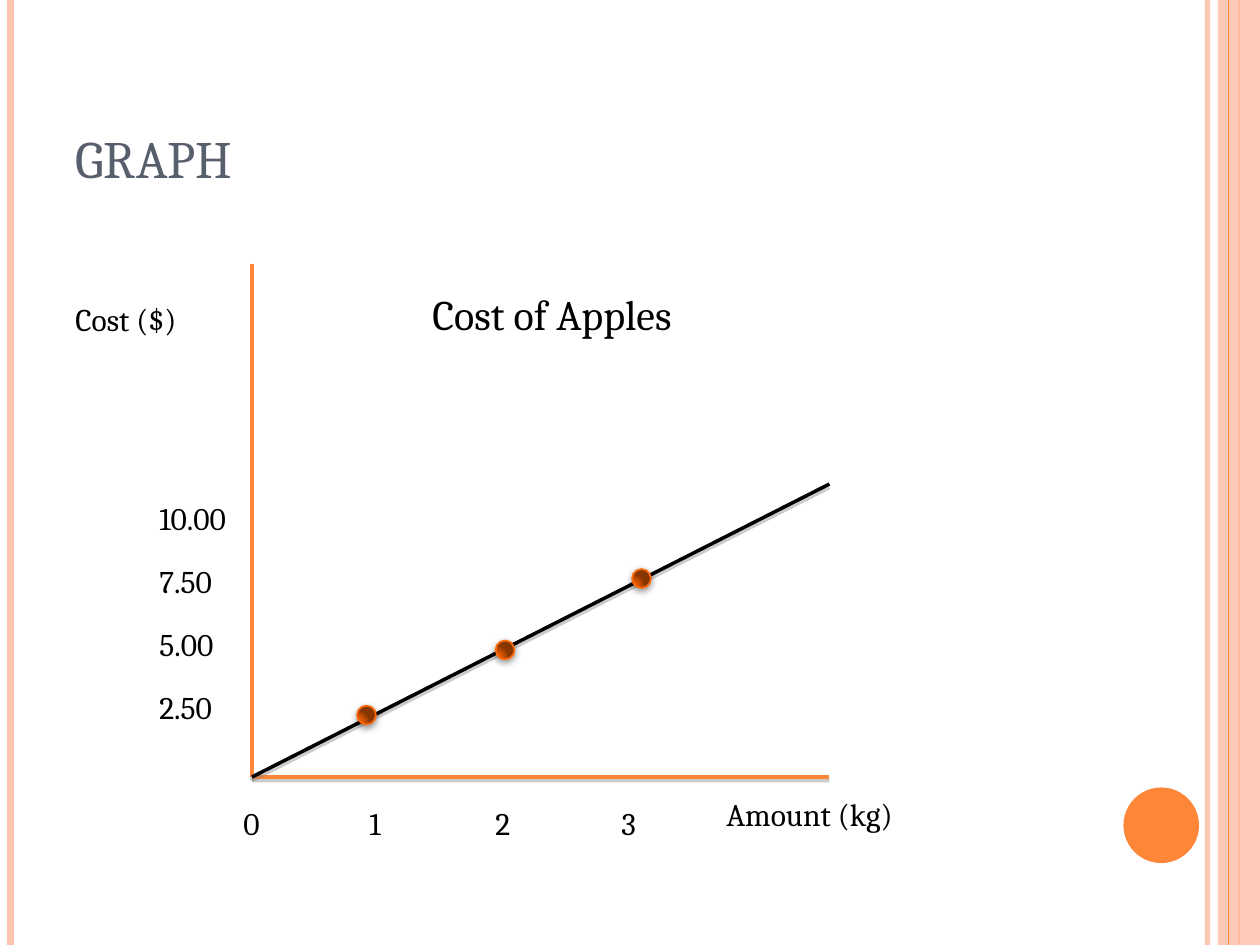
from pptx import Presentation
from pptx.dml.color import RGBColor
from pptx.enum.shapes import MSO_CONNECTOR, MSO_SHAPE
from pptx.enum.text import MSO_ANCHOR, MSO_AUTO_SIZE, PP_ALIGN
from pptx.oxml import parse_xml
from pptx.oxml.ns import nsdecls, qn
from pptx.util import Inches, Pt

COLORS = {
    "peach": "FEC3AE", "orange": "FE8637", "slate": "575F6D", "black": "000000",
    "gray": "808080", "rim": "FF6B0A", "bright": "FD6400", "warm": "F46100",
    "rust": "B74900", "brown": "873600",
}
SHADOW = (
    '<a:effectLst {ns}><a:outerShdw blurRad="{blur}" dist="{distance}" dir="5400000" rotWithShape="0">'
    '<a:srgbClr val="{color}"><a:alpha val="{alpha}"/></a:srgbClr></a:outerShdw></a:effectLst>'
)
ALPHA = '<a:alpha {ns} val="{value}"/>'
NS = nsdecls("a")

deck = Presentation()
deck.slide_width, deck.slide_height = Inches(10), Inches(7.5)
column, row = deck.slide_width / 120, deck.slide_height / 90
page = deck.slides.add_slide(deck.slide_layouts[5])


def write_text(box, text, size=18, color="black", anchor=MSO_ANCHOR.TOP,
               fit=MSO_AUTO_SIZE.SHAPE_TO_FIT_TEXT, gap=0):
    frame = box.text_frame
    frame.word_wrap = True
    frame.auto_size = fit
    frame.vertical_anchor = anchor
    frame.text = text
    for index, para in enumerate(frame.paragraphs):
        para.alignment = PP_ALIGN.LEFT
        para.space_before = Pt(gap if index else 0)
        for span in para.runs:
            span.font.size = Pt(size)
            span.font.name = "Cambria"
            span.font.color.rgb = RGBColor.from_string(COLORS[color])


def draw_line(start, end, color, width, alpha=100, shadow=False):
    line = page.shapes.add_connector(
        MSO_CONNECTOR.STRAIGHT, int(start[0] * column), int(start[1] * row),
        int(end[0] * column), int(end[1] * row))
    line.line.width = Pt(width)
    line.line.color.rgb = RGBColor.from_string(COLORS[color])
    if alpha < 100:
        tint = line._element.spPr.find(".//" + qn("a:srgbClr"))
        tint.append(parse_xml(ALPHA.format(ns=NS, value=alpha * 1000)))
    effect = f"<a:effectLst {NS}/>"
    if shadow:
        effect = SHADOW.format(ns=NS, blur=0, distance=Pt(2), color=COLORS["gray"], alpha=40000)
    line._element.spPr.append(parse_xml(effect))


for x, color, width, alpha in [(115, "peach", 3, 93), (1, "peach", 4.5, 100), (118, "orange", 1.5, 100)]:
    draw_line((x, 0), (x, 90), color, width, alpha)

band = page.shapes.add_shape(
    MSO_SHAPE.RECTANGLE, int(116 * column), 0, int(4 * column), deck.slide_height)
disc = page.shapes.add_shape(
    MSO_SHAPE.OVAL, int(107 * column), int(75 * row), int(7.2 * column), int(7.2 * row))
for shape, color in [(band, "peach"), (disc, "orange")]:
    shape.shadow.inherit = False
    shape.fill.solid()
    shape.fill.fore_color.rgb = RGBColor.from_string(COLORS[color])
    shape.line.fill.background()
band_tint = band._element.spPr.find(".//" + qn("a:srgbClr"))
band_tint.append(parse_xml(ALPHA.format(ns=NS, value=87000)))
draw_line((117, 0), (117, 90), "orange", 0.75)

title = page.shapes.title
title.left, title.top = int(6 * column), int(3.6 * row)
title.width, title.height = int(98 * column), int(15 * row)
write_text(title, "GRAPH", size=30, color="slate", anchor=MSO_ANCHOR.BOTTOM, fit=MSO_AUTO_SIZE.NONE)

origin = (24, 74)
draw_line((24, 25.1), origin, "orange", 2, shadow=True)
draw_line(origin, (79, 74), "orange", 2, shadow=True)

labels = [
    ("Amount (kg)", 68, 75.1, 20, 4.8, {}),
    ("Cost ($)", 6, 28, 20, 4.8, {}),
    ("0\t1\t2\t3", 22, 76, 51, 4.8, {}),
    ("10.00\n7.50\n5.00\n2.50", 14, 46.9, 12, 23, {"gap": 14.4}),
    ("Cost of Apples", 40, 26.9, 47, 6.1, {"size": 24}),
]
for text, left, top, width, height, style in labels:
    box = page.shapes.add_textbox(
        int(left * column), int(top * row), int(width * column), int(height * row))
    write_text(box, text, **style)
    if "\t" in text:
        stops = "".join(f'<a:tab pos="{Inches(inch)}" algn="l"/>' for inch in (1, 2, 3))
        properties = box.text_frame.paragraphs[0]._p.get_or_add_pPr()
        properties.append(parse_xml(f"<a:tabLst {NS}>{stops}</a:tabLst>"))

draw_line(origin, (79, 46.1), "black", 2, shadow=True)

gradient_stops = "".join(
    f'<a:gs pos="{position * 1000}"><a:srgbClr val="{COLORS[color]}"/></a:gs>'
    for position, color in [(0, "bright"), (30, "warm"), (75, "rust"), (100, "brown")])
gradient = (
    f'<a:gradFill {NS} rotWithShape="1"><a:gsLst>{gradient_stops}</a:gsLst><a:path path="circle">'
    '<a:fillToRect l="5000" t="100000" r="120000" b="10000"/></a:path></a:gradFill>')
for left, top in [(34, 67.2), (47.2, 61), (60.2, 54.2)]:
    point = page.shapes.add_shape(
        MSO_SHAPE.OVAL, int(left * column), int(top * row), int(1.8 * column), int(1.8 * row))
    point.line.width = Pt(1)
    point.line.color.rgb = RGBColor.from_string(COLORS["rim"])
    properties = point._element.spPr
    properties.insert(2, parse_xml(gradient))
    properties.append(parse_xml(SHADOW.format(
        ns=NS, blur=Pt(4), distance=Pt(1.6), color=COLORS["black"], alpha=42000)))

deck.save("out.pptx")
